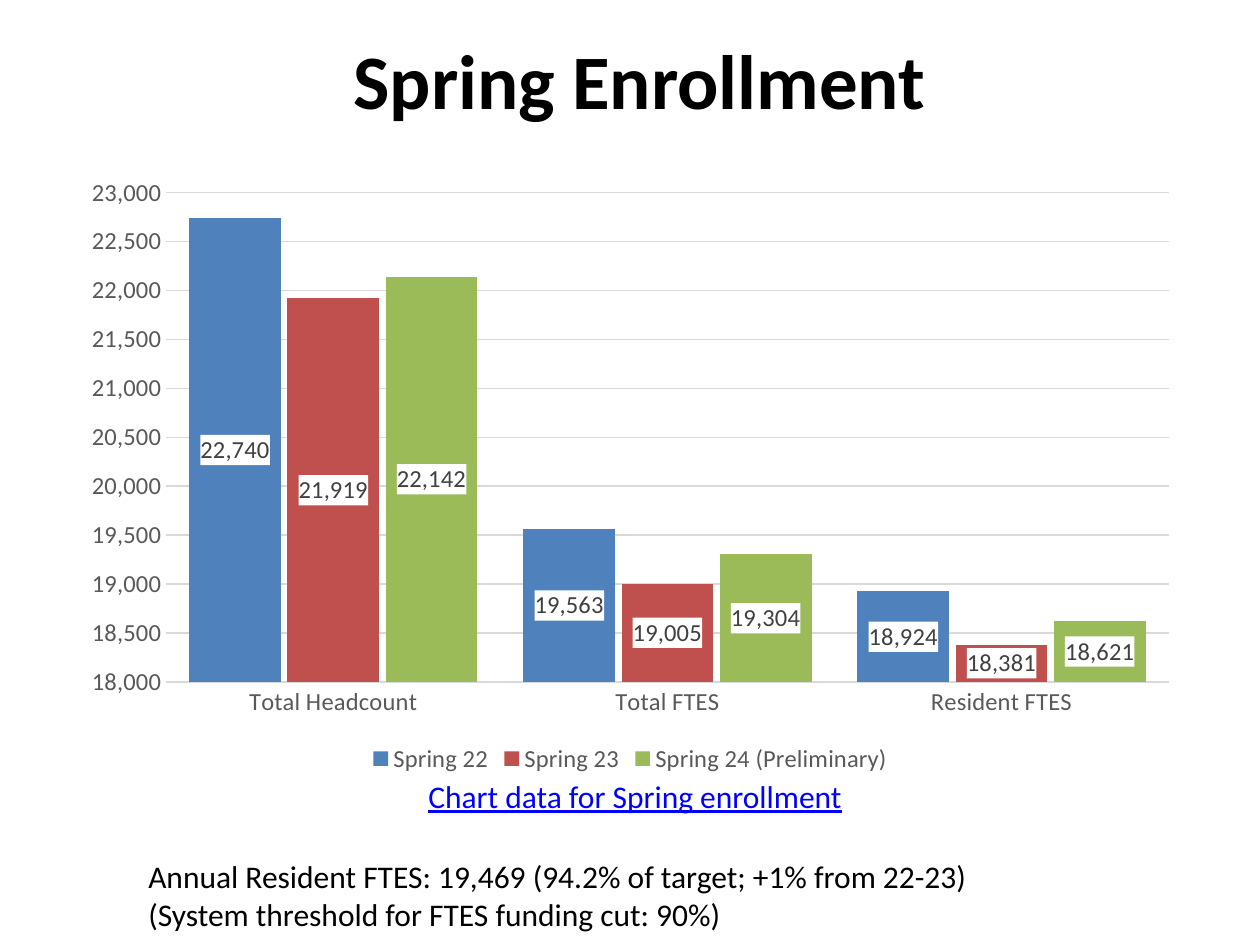
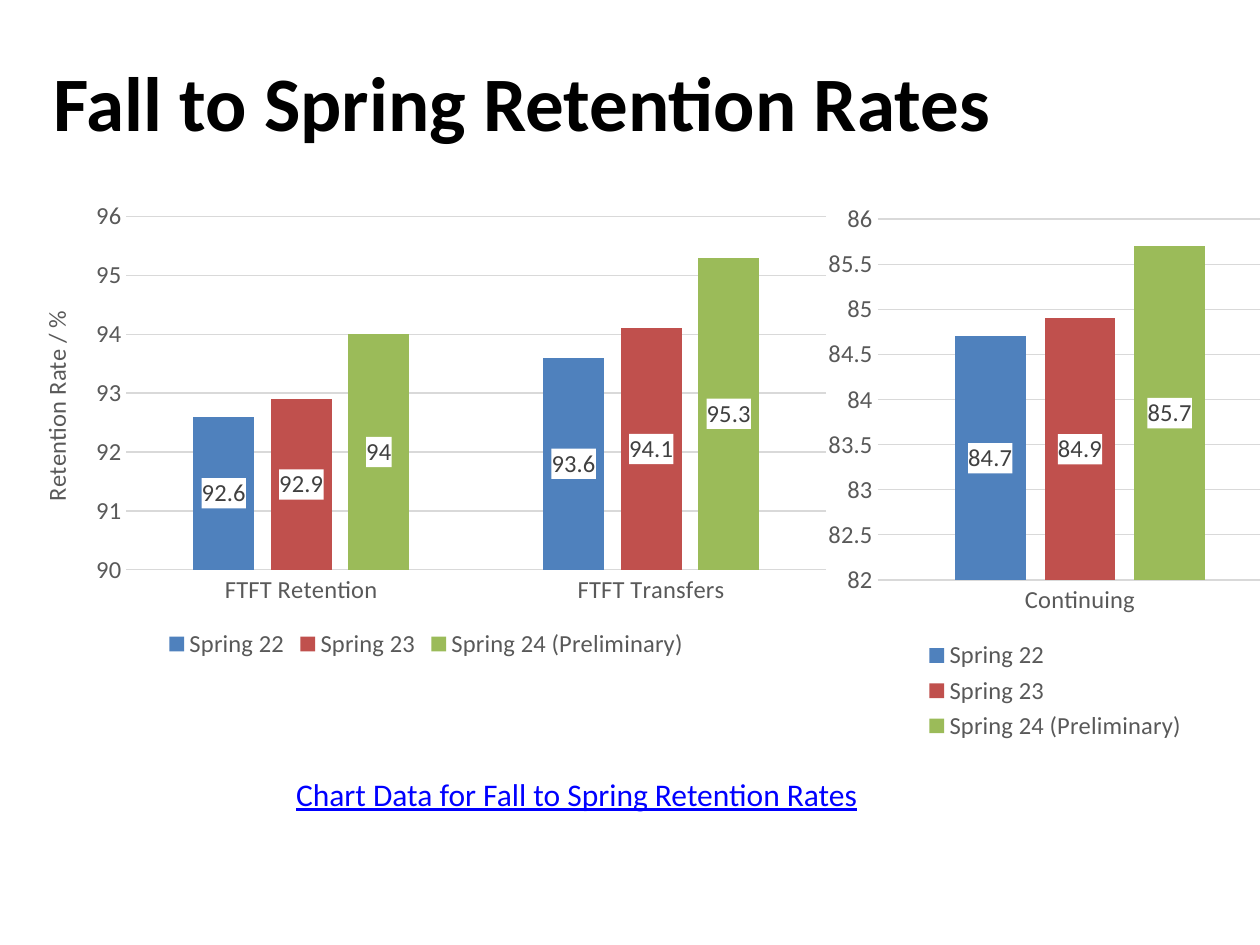
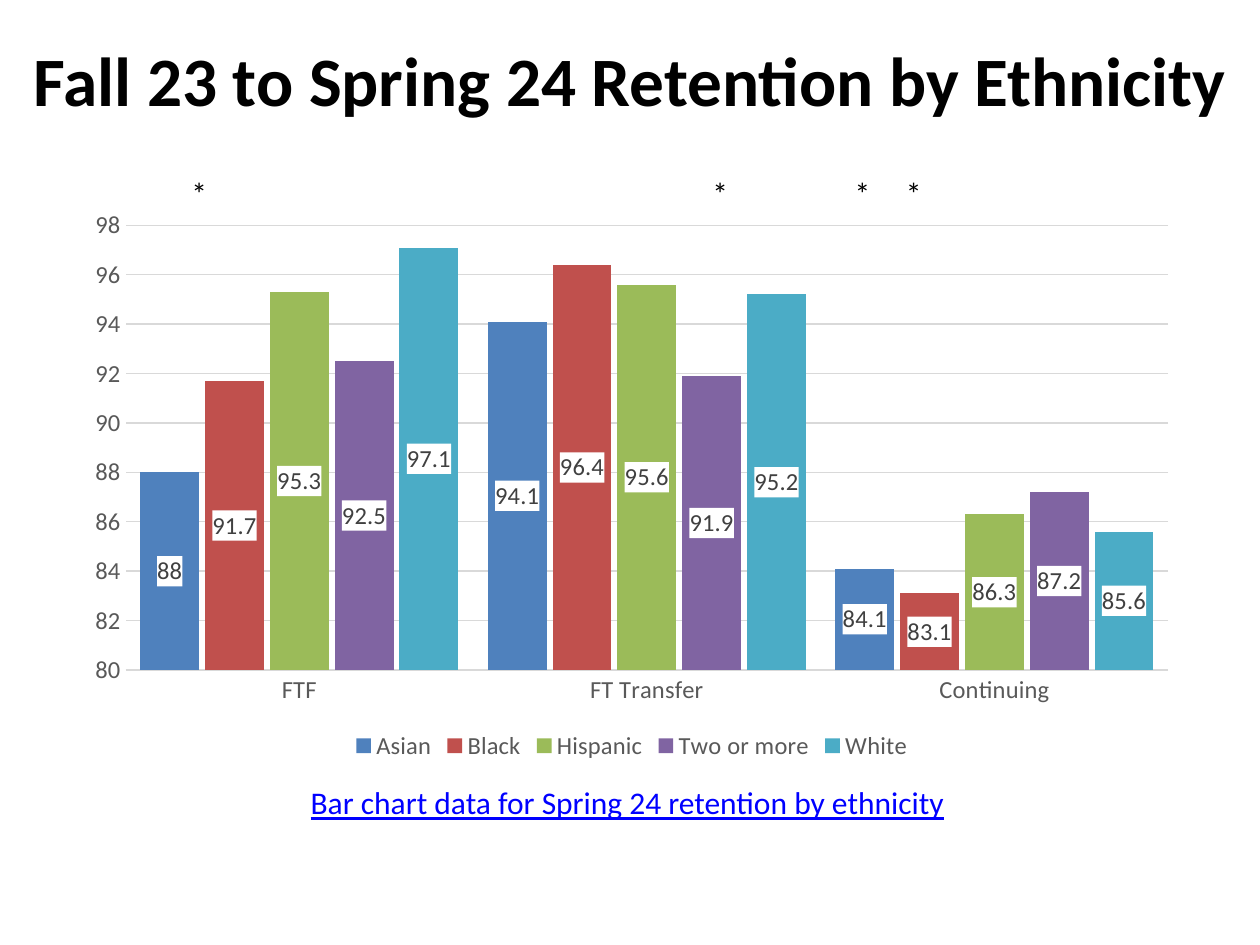
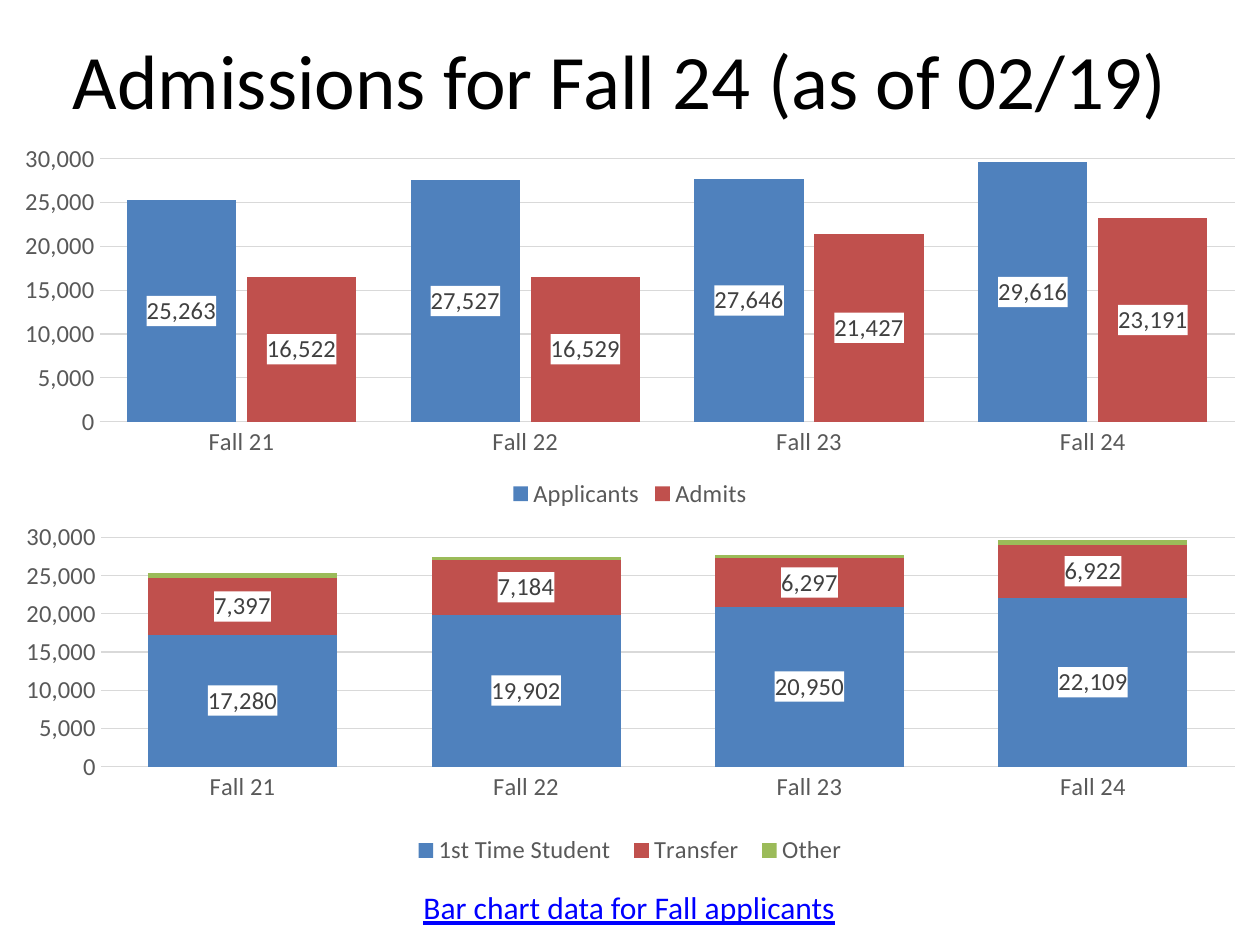
import pptx
import pptx.chart.data
import pptx.dml.color
import pptx.enum.chart
import pptx.enum.text
import pptx.oxml
import pptx.oxml.ns
import pptx.util
from lxml import etree

Cm, Pt = pptx.util.Cm, pptx.util.Pt
RGBColor = pptx.dml.color.RGBColor
ALIGN = pptx.enum.text.PP_ALIGN
CHART = pptx.enum.chart.XL_CHART_TYPE
qn = pptx.oxml.ns.qn

BLACK = RGBColor(0x00, 0x00, 0x00)
LINK_BLUE = RGBColor(0x00, 0x00, 0xFF)
AXIS_GRAY = RGBColor(0x59, 0x59, 0x59)
LABEL_GRAY = RGBColor(0x40, 0x40, 0x40)
GRID_GRAY = RGBColor(0xD9, 0xD9, 0xD9)
SERIES_COLORS = [
    RGBColor(0x4F, 0x81, 0xBD),
    RGBColor(0xC0, 0x50, 0x4D),
    RGBColor(0x9B, 0xBB, 0x59),
    RGBColor(0x80, 0x64, 0xA2),
    RGBColor(0x4B, 0xAC, 0xC6),
]
FONT = "Calibri"
THOUSANDS = "#,##0"
SPRINGS = ["Spring 22", "Spring 23", "Spring 24 (Preliminary)"]
FALLS = ["Fall 21", "Fall 22", "Fall 23", "Fall 24"]
LABEL_FILL = (
    f"<c:spPr {pptx.oxml.ns.nsdecls('c', 'a')}><a:solidFill>"
    '<a:srgbClr val="FFFFFF"/></a:solidFill></c:spPr>'
)

# Boxes are left, top, width, height in centimetres.
SLIDES = [
    {
        "title": "Spring Enrollment",
        "title_box": (1.47, 0, 22.86, 3.18),
        "charts": [
            {
                "box": (1.4, 3.33, 22.61, 12.37),
                "categories": ["Total Headcount", "Total FTES", "Resident FTES"],
                "series": dict(zip(SPRINGS, [
                    (22740, 19563, 18924),
                    (21919, 19005, 18381),
                    (22142, 19304, 18621),
                ])),
                "format": THOUSANDS, "minimum": 18000, "gap": 50, "overlap": -7,
            },
        ],
        "link": "Chart data for Spring enrollment",
        "link_box": (0.84, 15.54, 23.93, 1.02),
    },
    {
        "title": "Fall to Spring Retention Rates",
        "title_box": (1.07, 0.43, 22.86, 3.18),
        "title_align": ALIGN.LEFT,
        "charts": [
            {
                "box": (0.2, 3.89, 16.79, 9.5),
                "categories": ["FTFT Retention", "FTFT Transfers"],
                "series": dict(zip(SPRINGS, [(92.6, 93.6), (92.9, 94.1), (94, 95.3)])),
                "minimum": 90, "gap": 219, "overlap": -27,
                "axis_title": "Retention Rate / %",
                "plot": {"x": 0.14, "y": 0.05, "w": 0.84, "h": 0.75},
            },
            {
                "box": (16.51, 3.89, 9.53, 11.15),
                "categories": ["Continuing"],
                "series": dict(zip(SPRINGS, [(84.7,), (84.9,), (85.7,)])),
                "minimum": 82, "gap": 219, "overlap": -27,
            },
        ],
        "link": "Chart Data for Fall to Spring Retention Rates",
        "link_box": (5.72, 15.49, 13.77, 1.02),
        "link_align": ALIGN.LEFT,
    },
    {
        "title": "Fall 23 to Spring 24 Retention by Ethnicity",
        "title_box": (0, 0, 25.4, 3.18),
        "title_size": 39.6,
        "charts": [
            {
                "box": (1.47, 4.01, 22.53, 11.43),
                "categories": ["FTF", "FT Transfer", "Continuing"],
                "series": {
                    "Asian": (88, 94.1, 84.1),
                    "Black": (91.7, 96.4, 83.1),
                    "Hispanic": (95.3, 95.6, 86.3),
                    "Two or more": (92.5, 91.9, 87.2),
                    "White": (97.1, 95.2, 85.6),
                },
                "minimum": 80, "gap": 50, "overlap": -10,
            },
        ],
        "link": "Bar chart data for Spring 24 retention by ethnicity",
        "link_box": (1.17, 15.67, 22.96, 1.02),
    },
    {
        "title": "Admissions for Fall 24 (as of 02/19)",
        "title_box": (1.47, 0, 22.86, 3.18),
        "title_align": ALIGN.LEFT,
        "title_bold": False,
        "charts": [
            {
                "box": (0, 2.74, 25.4, 7.62),
                "categories": FALLS,
                "series": {
                    "Applicants": (25263, 27527, 27646, 29616),
                    "Admits": (16522, 16529, 21427, 23191),
                },
                "format": THOUSANDS, "maximum": 30000, "gap": 50, "overlap": -10,
            },
            {
                "box": (0, 10.34, 25.4, 8.25),
                "type": CHART.COLUMN_STACKED,
                "categories": FALLS,
                "series": {
                    "1st Time Student": (17280, 19902, 20950, 22109),
                    "Transfer": (7397, 7184, 6297, 6922),
                    "Other": (600, 400, 400, 600),
                },
                "unlabelled": ["Other"],
                "format": THOUSANDS, "maximum": 30000, "gap": 50, "overlap": 100,
                "plot": {"x": 0.08, "y": 0.06, "w": 0.9, "h": 0.56},
                "legend": {"x": 0.32, "y": 0.78, "w": 0.36, "h": 0.09},
            },
        ],
        "link": "Bar chart data for Fall applicants",
        "link_box": (4.01, 17.78, 17.35, 1.02),
    },
]


def add_text(page, text, bounds, color=BLACK, align=ALIGN.LEFT, underline=None):
    box = page.shapes.add_textbox(*map(Cm, bounds))
    frame = box.text_frame
    frame.word_wrap = True
    frame.auto_size = pptx.enum.text.MSO_AUTO_SIZE.SHAPE_TO_FIT_TEXT
    frame.text = text
    for para in frame.paragraphs:
        para.alignment = align
        for span in para.runs:
            span.font.name = FONT
            span.font.size = Pt(18)
            span.font.color.rgb = color
            span.font.underline = underline
    return box


def set_layout(parent, **fractions):
    """Place a chart part by fractions of the chart's width and height."""
    layout = parent.find(qn("c:layout"))
    if layout is None:
        layout = etree.Element(qn("c:layout"))
        overlay = parent.find(qn("c:overlay"))
        parent.insert(0 if overlay is None else parent.index(overlay), layout)
    manual = etree.SubElement(layout, qn("c:manualLayout"))
    settings = {"xMode": "edge", "yMode": "edge", **fractions}
    if parent.tag == qn("c:plotArea"):
        settings = {"layoutTarget": "inner", **settings}
    for name, value in settings.items():
        etree.SubElement(manual, qn(f"c:{name}")).set("val", str(value))


deck = pptx.Presentation()
deck.slide_width, deck.slide_height = Cm(25.4), Cm(19.05)
title_only = deck.slide_layouts.get_by_name("Title Only")

pages = []
for content in SLIDES:
    page = deck.slides.add_slide(title_only)
    pages.append(page)

    title = page.shapes.title
    title.left, title.top, title.width, title.height = map(Cm, content["title_box"])
    frame = title.text_frame
    frame.text = content["title"]
    frame.word_wrap = True
    frame.auto_size = pptx.enum.text.MSO_AUTO_SIZE.NONE
    frame.vertical_anchor = pptx.enum.text.MSO_ANCHOR.MIDDLE
    frame.margin_left = frame.margin_right = 0
    para = frame.paragraphs[0]
    para.alignment = content.get("title_align", ALIGN.CENTER)
    span = para.runs[0]
    span.font.name = FONT
    span.font.size = Pt(content.get("title_size", 44))
    span.font.bold = content.get("title_bold", True)
    span.font.color.rgb = BLACK

    for info in content["charts"]:
        number_format = info.get("format", "General")
        data = pptx.chart.data.CategoryChartData(number_format=number_format)
        data.categories = info["categories"]
        for name, values in info["series"].items():
            data.add_series(name, values)
        chart = page.shapes.add_chart(
            info.get("type", CHART.COLUMN_CLUSTERED), *map(Cm, info["box"]), data
        ).chart
        chart.has_title = False
        chart.font.name = FONT
        chart.font.size = Pt(14)
        chart.font.color.rgb = AXIS_GRAY
        chart.has_legend = True
        chart.legend.position = pptx.enum.chart.XL_LEGEND_POSITION.BOTTOM
        chart.legend.include_in_layout = False

        category_axis, value_axis = chart.category_axis, chart.value_axis
        for axis in (category_axis, value_axis):
            axis.major_tick_mark = pptx.enum.chart.XL_TICK_MARK.NONE
            axis.minor_tick_mark = pptx.enum.chart.XL_TICK_MARK.NONE
        value_axis.has_major_gridlines = True
        for line in (category_axis.format.line, value_axis.major_gridlines.format.line):
            line.color.rgb = GRID_GRAY
            line.width = Pt(0.75)
        value_axis.format.line.fill.background()
        value_axis.minimum_scale = info.get("minimum")
        value_axis.maximum_scale = info.get("maximum")
        value_axis.tick_labels.number_format = number_format
        value_axis.tick_labels.number_format_is_linked = False

        plot = chart.plots[0]
        plot.vary_by_categories = False
        plot.gap_width = info["gap"]
        plot.overlap = info["overlap"]
        for series, color in zip(plot.series, SERIES_COLORS):
            series.format.fill.solid()
            series.format.fill.fore_color.rgb = color
            series.invert_if_negative = False
            if series.name in info.get("unlabelled", []):
                continue
            labels = series.data_labels
            labels.show_value = True
            labels.position = pptx.enum.chart.XL_LABEL_POSITION.CENTER
            labels.number_format = number_format
            labels.number_format_is_linked = False
            labels.font.name = FONT
            labels.font.size = Pt(14)
            labels.font.color.rgb = LABEL_GRAY
            text_style = labels._element.find(qn("c:txPr"))
            text_style.addprevious(pptx.oxml.parse_xml(LABEL_FILL))

        if "plot" in info:
            set_layout(chart._chartSpace.chart.plotArea, **info["plot"])
        if "legend" in info:
            set_layout(chart.legend._element, **info["legend"])
        if "axis_title" in info:
            axis_title = value_axis.axis_title
            axis_title.text_frame.text = info["axis_title"]
            span = axis_title.text_frame.paragraphs[0].runs[0]
            span.font.name = FONT
            span.font.size = Pt(14)
            span.font.bold = False
            span.font.color.rgb = AXIS_GRAY
            body = axis_title._element.find(".//" + qn("a:bodyPr"))
            body.set("rot", "-5400000")
            body.set("vert", "horz")
            set_layout(axis_title._element, x=0.03, y=0.24)

    add_text(page, content["link"], content["link_box"], LINK_BLUE,
             content.get("link_align", ALIGN.CENTER), underline=True)

add_text(
    pages[0],
    "Annual Resident FTES: 19,469 (94.2% of target; +1% from 22-23)\n"
    "(System threshold for FTES funding cut: 90%)",
    (2.74, 17.15, 19.89, 1.8),
)

# Asterisks stand above the marked columns, spaced by tab stops.
markers = add_text(pages[2], "*\t*\t*\t*", (3.61, 3.38, 15.75, 1.02))
properties = markers.text_frame.paragraphs[0]._p.get_or_add_pPr()
tab_list = etree.SubElement(properties, qn("a:tabLst"))
for stop in (10.5, 13.37, 14.4):
    etree.SubElement(tab_list, qn("a:tab"), pos=str(Cm(stop)), algn="l")

deck.save("out.pptx")
